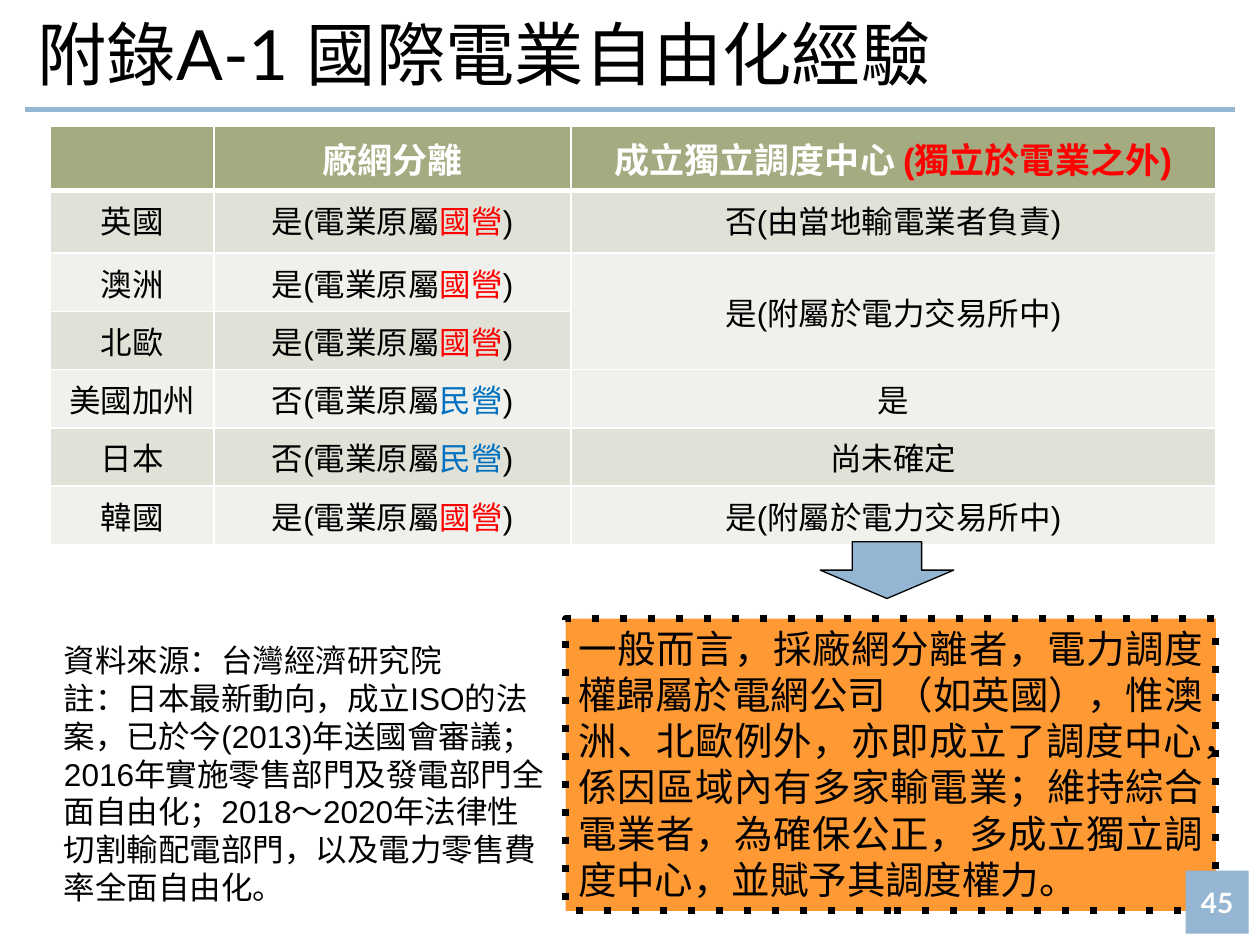
"""Build the slide on international power-market liberalisation."""
from dataclasses import dataclass

from lxml.etree import SubElement
from pptx import Presentation
from pptx.dml.color import RGBColor
from pptx.enum.shapes import MSO_CONNECTOR, MSO_SHAPE
from pptx.enum.text import MSO_ANCHOR, PP_ALIGN
from pptx.oxml import parse_xml
from pptx.oxml.ns import nsdecls, qn
from pptx.util import Inches, Pt

COLORS = {
    "black": "000000", "white": "FFFFFF", "red": "FF0000", "blue": "0070C0",
    "sky": "94B6D2", "orange": "FF9933", "olive": "A5AB81",
    "band_dark": "E0E2D7", "band_light": "F0F1EC",
}


@dataclass(frozen=True)
class Style:
    size: float
    font: str = "Arial"
    color: str = "black"
    bold: bool = False
    align: PP_ALIGN = PP_ALIGN.LEFT


@dataclass(frozen=True)
class Box:
    left: float
    top: float
    width: float
    height: float

    def emu(self) -> tuple:
        return tuple(map(Inches, (self.left, self.top, self.width, self.height)))


@dataclass(frozen=True)
class Country:
    name: str
    separated: str
    owner: str
    centre: str


HEADERS = (
    (),
    (("廠網分離", "white"),),
    (("成立獨立調度中心 ", "white"), ("(獨立於電業之外)", "red")),
)
COUNTRIES = (
    Country("英國", "是", "國營", "否(由當地輸電業者負責)"),
    Country("澳洲", "是", "國營", "是(附屬於電力交易所中)"),
    Country("北歐", "是", "國營", ""),
    Country("美國加州", "否", "民營", "是"),
    Country("日本", "否", "民營", "尚未確定"),
    Country("韓國", "是", "國營", "是(附屬於電力交易所中)"),
)
OWNER_COLORS = {"國營": "red", "民營": "blue"}
COL_WIDTHS = (1.3, 2.83, 5.12)
ROW_HEIGHTS = (0.51, 0.5) + (0.46,) * 5
HEADER = Style(20, color="white", bold=True, align=PP_ALIGN.CENTER)
BODY = Style(18, align=PP_ALIGN.CENTER)
SOURCE_NOTES = (
    "資料來源：台灣經濟研究院",
    "註：日本最新動向，成立ISO的法案，已於今(2013)年送國會審議；"
    "2016年實施零售部門及發電部門全面自由化；2018～2020年法律性切割輸配電部門，"
    "以及電力零售費率全面自由化。",
)
CONCLUSION = (
    "一般而言，採廠網分離者，電力調度權歸屬於電網公司 （如英國），惟澳洲、北歐例外，"
    "亦即成立了調度中心，係因區域內有多家輸電業；維持綜合電業者，為確保公正，"
    "多成立獨立調度中心，並賦予其調度權力。"
)


def rgb(name: str) -> RGBColor:
    return RGBColor.from_string(COLORS[name])


def add_runs(p, runs, style: Style) -> None:
    p.alignment = style.align
    for text, color in runs:
        r = p.add_run()
        r.text = text
        r.font.size = Pt(style.size)
        r.font.name = style.font
        r.font.bold = style.bold
        r.font.color.rgb = rgb(color)


def write(tf, paragraphs, style: Style, anchor=MSO_ANCHOR.TOP) -> None:
    tf.word_wrap = True
    tf.vertical_anchor = anchor
    for i, text in enumerate(paragraphs):
        p = tf.add_paragraph() if i else tf.paragraphs[0]
        add_runs(p, [(text, style.color)], style)


def add_text(s, box: Box, paragraphs, style: Style, anchor=MSO_ANCHOR.TOP):
    sp = s.shapes.add_textbox(*box.emu())
    write(sp.text_frame, paragraphs, style, anchor)
    return sp


def add_block(s, kind, box: Box, fill: str, line: float = 0):
    sp = s.shapes.add_shape(kind, *box.emu())
    sp.shadow.inherit = False
    sp.fill.solid()
    sp.fill.fore_color.rgb = rgb(fill)
    if line:
        sp.line.color.rgb = rgb("black")
        sp.line.width = Pt(line)
    else:
        sp.line.fill.background()
    return sp


def style_cell(cell, fill: str, top: float, bottom: float) -> None:
    cell.fill.solid()
    cell.fill.fore_color.rgb = rgb(fill)
    cell.margin_left = cell.margin_right = Inches(0.09)
    widths = {"lnL": 1, "lnR": 1, "lnT": top, "lnB": bottom}
    for i, (tag, width) in enumerate(widths.items()):
        cell._tc.tcPr.insert(i, parse_xml(
            f'<a:{tag} {nsdecls("a")} w="{Pt(width)}"><a:solidFill>'
            f'<a:srgbClr val="{COLORS["white"]}"/></a:solidFill></a:{tag}>'))


def country_cells(c: Country) -> tuple:
    status = ((f"{c.separated}(電業原屬", "black"),
              (c.owner, OWNER_COLORS[c.owner]), (")", "black"))
    centre = ((c.centre, "black"),) if c.centre else ()
    return ((c.name, "black"),), status, centre


def add_country_table(s) -> None:
    rows = (HEADERS, *map(country_cells, COUNTRIES))
    box = Box(0.4, 1, sum(COL_WIDTHS), sum(ROW_HEIGHTS))
    table = s.shapes.add_table(len(rows), len(COL_WIDTHS), *box.emu()).table
    for col, width in zip(table.columns, COL_WIDTHS):
        col.width = Inches(width)
    for i, (cells, height) in enumerate(zip(rows, ROW_HEIGHTS)):
        table.rows[i].height = Inches(height)
        fill = "olive" if i == 0 else "band_dark" if i % 2 else "band_light"
        for j, runs in enumerate(cells):
            cell = table.cell(i, j)
            style_cell(cell, fill, 3 if i == 1 else 1, 1 if i else 3)
            add_runs(cell.text_frame.paragraphs[0], runs, BODY if i else HEADER)
    table.cell(2, 2).merge(table.cell(3, 2))
    table.cell(2, 2).vertical_anchor = MSO_ANCHOR.MIDDLE


def add_rule(s) -> None:
    rule = s.shapes.add_connector(
        MSO_CONNECTOR.STRAIGHT, Inches(0.2), Inches(0.87), Inches(9.8), Inches(0.87))
    rule.line.color.rgb = rgb("sky")
    rule.line.width = Pt(3)
    SubElement(rule._element.spPr, qn("a:effectLst"))


def add_conclusion(s) -> None:
    sp = add_block(s, MSO_SHAPE.RECTANGLE, Box(4.49, 4.91, 5.16, 2.32), "orange", 4)
    SubElement(sp.line._get_or_add_ln(), qn("a:prstDash"), val="dot")
    write(sp.text_frame, [CONCLUSION], Style(22, align=PP_ALIGN.JUSTIFY))
    arrow = add_block(s, MSO_SHAPE.DOWN_ARROW, Box(6.51, 4.3, 1.06, 0.45), "sky", 0.75)
    arrow.adjustments[0] = 0.52
    arrow.adjustments[1] = 0.5


def add_page_number(s) -> None:
    sp = add_block(s, MSO_SHAPE.RECTANGLE, Box(9.41, 6.91, 0.5, 0.5), "sky")
    tf = sp.text_frame
    tf.margin_left = tf.margin_right = tf.margin_top = tf.margin_bottom = 0
    style = Style(16, "Lato", "white", True, PP_ALIGN.CENTER)
    write(tf, ["45"], style, MSO_ANCHOR.MIDDLE)


def main() -> None:
    prs = Presentation()
    prs.slide_width, prs.slide_height = Inches(10), Inches(7.5)
    s = prs.slides.add_slide(prs.slide_layouts[6])
    add_rule(s)
    add_country_table(s)
    add_text(s, Box(0.41, 5.04, 4.03, 2.22), SOURCE_NOTES, Style(18))
    add_conclusion(s)
    title = add_text(s, Box(0.2, 0.13, 9.61, 0.63), ["附錄A-1 國際電業自由化經驗"],
                     Style(39.6, "Lato"), MSO_ANCHOR.MIDDLE)
    title.text_frame.margin_bottom = Inches(0.1)
    add_page_number(s)
    prs.save("out.pptx")


if __name__ == "__main__":
    main()
